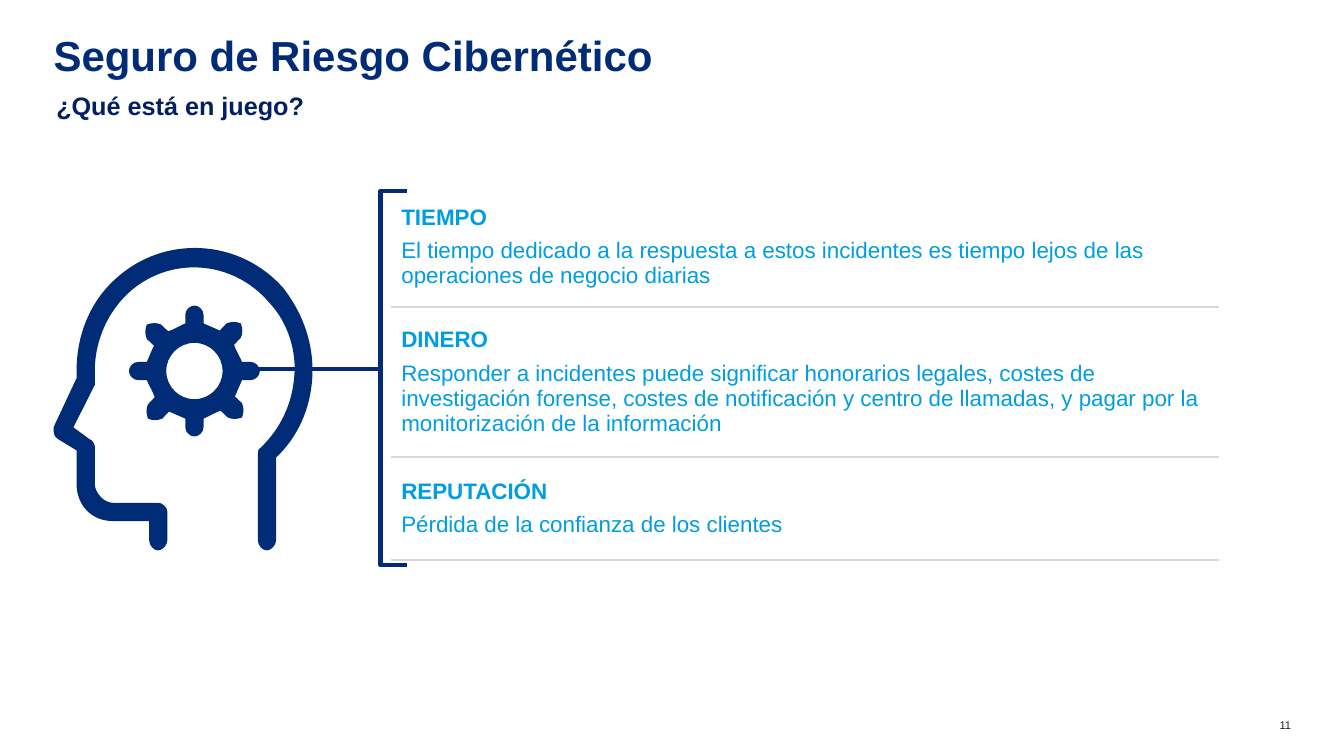
from dataclasses import dataclass

from lxml.etree import SubElement
from pptx import Presentation
from pptx.dml.color import RGBColor
from pptx.enum.shapes import MSO_CONNECTOR
from pptx.enum.text import MSO_ANCHOR, MSO_AUTO_SIZE, PP_ALIGN
from pptx.oxml.ns import qn
from pptx.util import Cm, Pt


@dataclass(frozen=True)
class Theme:
    """Colours, font and type sizes of the deck."""
    font: str = "Arial"
    navy: str = "002C77"
    dark: str = "002060"
    sky: str = "009DE0"
    rule: str = "D9D9D9"
    ink: str = "202020"
    title: int = 30
    sub: int = 18
    body: int = 16
    small: int = 8
    stroke: int = 3
    border: float = 1.5


def rgb(code):
    """Turn a hex code into a colour."""
    return RGBColor.from_string(code)


def pairs(step):
    """Split a step into its points."""
    return list(zip(step[::2], step[1::2]))


def spin(step, turns, x, y):
    """Turn a step by quarters and move it to a centre."""
    points = pairs(step)
    for _ in range(turns):
        points = [(-v, u) for u, v in points]
    return tuple(n for u, v in points for n in (x + u, y + v))


def ring(steps, x, y):
    """Repeat a quarter of steps around a centre."""
    return [spin(step, turns, x, y) for turns in range(4) for step in steps]


class Board:
    """Hold the theme and the current slide, and draw on it."""

    def __init__(self, slide, theme):
        """Keep the slide and its theme."""
        self.slide, self.theme = slide, theme

    def style(self, para, size, color, bold=False):
        """Format every run of a paragraph."""
        for run in para.runs:
            font = run.font
            font.name, font.size, font.bold = self.theme.font, Pt(size), bold
            font.color.rgb = rgb(color)

    def title(self, text, left, top, width, height):
        """Place and format the title placeholder."""
        shape = self.slide.shapes.title
        shape.left, shape.top = Cm(left), Cm(top)
        shape.width, shape.height = Cm(width), Cm(height)
        frame = shape.text_frame
        frame.text = text
        frame.auto_size = MSO_AUTO_SIZE.NONE
        frame.vertical_anchor = MSO_ANCHOR.TOP
        frame.margin_left = frame.margin_right = 0
        frame.margin_top = frame.margin_bottom = 0
        para = frame.paragraphs[0]
        para.alignment, para.line_spacing = PP_ALIGN.LEFT, 0.8
        self.style(para, self.theme.title, self.theme.navy, True)

    def label(self, text, left, top, width, height, size, color,
              bold=False, align=PP_ALIGN.LEFT, inset=None):
        """Add a one-paragraph text box."""
        box = self.slide.shapes.add_textbox(Cm(left), Cm(top), Cm(width), Cm(height))
        frame = box.text_frame
        frame.word_wrap = True
        if inset is not None:
            frame.margin_left = frame.margin_right = Cm(inset)
            frame.margin_top = frame.margin_bottom = Cm(inset)
        frame.text = text
        frame.paragraphs[0].alignment = align
        self.style(frame.paragraphs[0], size, color, bold)

    def link(self, left, right, y):
        """Add a level line that starts with a dot."""
        line = self.slide.shapes.add_connector(
            MSO_CONNECTOR.STRAIGHT, Cm(left), Cm(y), Cm(right), Cm(y))
        line.line.color.rgb = rgb(self.theme.navy)
        line.line.width = Pt(self.theme.stroke)
        SubElement(line.line._get_or_add_ln(), qn("a:headEnd"), type="oval")
        SubElement(line._element.spPr, qn("a:effectLst"))

    def bend(self, shape, steps):
        """Join the points of each six-number step into one curve."""
        nodes = iter(list(shape._element.iter(qn("a:lnTo"))))
        for step in steps:
            first, *others = [next(nodes) for _ in pairs(step)]
            for node in others:
                first.append(node[0])
                node.getparent().remove(node)
            if others:
                first.tag = qn("a:cubicBezTo")

    def outline(self, *paths, solid=True):
        """Add a filled outline or an open stroke."""
        paths = [[tuple(n * 100 for n in step) for step in path] for path in paths]
        maker = self.slide.shapes.build_freeform(*paths[0][0], scale=Cm(0.01))
        for i, (start, *steps) in enumerate(paths):
            if i:
                maker.move_to(*start)
            maker.add_line_segments([p for s in steps for p in pairs(s)], close=solid)
        shape = maker.convert_to_shape()
        self.bend(shape, [step for path in paths for step in path[1:]])
        shape.shadow.inherit = False
        if solid:
            shape.fill.solid()
            shape.fill.fore_color.rgb = rgb(self.theme.navy)
            shape.line.fill.background()
        else:
            shape.fill.background()
            shape.line.color.rgb = rgb(self.theme.navy)
            shape.line.width = Pt(self.theme.stroke)

    def edge(self, cell, side, shown):
        """Draw or clear one border of a cell."""
        line = SubElement(cell._tc.get_or_add_tcPr(), qn(f"a:{side}"),
                          w=str(Pt(self.theme.border)))
        if shown:
            fill = SubElement(line, qn("a:solidFill"))
            SubElement(fill, qn("a:srgbClr"), val=self.theme.rule)
        else:
            SubElement(line, qn("a:noFill"))

    def table(self, items, left, top, width, heights):
        """Add a one-column table of headed texts."""
        grid = self.slide.shapes.add_table(
            len(items), 1, Cm(left), Cm(top), Cm(width), Cm(sum(heights))).table
        grid.first_row = grid.horz_banding = False
        for i, (item, height) in enumerate(zip(items, heights)):
            grid.rows[i].height = Cm(height)
            cell = grid.cell(i, 0)
            for side, shown in (("lnL", False), ("lnR", False), ("lnT", i > 0), ("lnB", True)):
                self.edge(cell, side, shown)
            cell.fill.background()
            cell.vertical_anchor = MSO_ANCHOR.MIDDLE
            cell.text_frame.text = "\n".join(item)
            for j, para in enumerate(cell.text_frame.paragraphs):
                para.space_after = Pt(6)
                self.style(para, self.theme.body, self.theme.sky, j == 0)


HEAD = [
    (7.14, 7.26), (6.05, 6.02, 4.14, 5.89, 2.9, 7.04),
    (2.26, 7.62, 1.93, 8.46, 1.93, 9.35),
    (1.93, 9.53), (1.35, 10.77), (1.35, 10.9, 1.35, 11, 1.47, 11.07),
    (1.93, 11.35), (1.93, 12.19), (1.93, 12.73, 2.31, 13.13, 2.84, 13.13),
    (3.76, 13.13), (3.76, 13.61), (3.76, 13.74, 3.86, 13.87, 3.99, 13.87),
    (4.09, 13.87, 4.22, 13.74, 4.22, 13.61), (4.22, 12.9),
    (4.22, 12.78, 4.09, 12.67, 3.99, 12.67), (2.84, 12.67),
    (2.62, 12.67, 2.39, 12.42, 2.39, 12.19), (2.39, 11.25),
    (2.39, 11.18, 2.31, 11.07, 2.26, 11.07), (1.85, 10.77), (2.39, 9.7), (2.39, 9.35),
    (2.39, 8.64, 2.67, 7.92, 3.23, 7.39), (4.27, 6.43, 5.87, 6.55, 6.78, 7.62),
    (7.24, 8.1, 7.47, 8.81, 7.42, 9.45), (7.37, 10.19, 7.06, 10.82, 6.55, 11.3),
    (6.5, 11.3, 6.5, 11.43, 6.5, 11.48), (6.5, 13.61),
    (6.5, 13.74, 6.6, 13.87, 6.73, 13.87), (6.83, 13.87, 6.96, 13.74, 6.96, 13.61),
    (6.96, 11.53), (7.52, 11, 7.82, 10.29, 7.87, 9.53),
    (7.92, 8.69, 7.65, 7.92, 7.14, 7.26),
]
TEETH = [
    (-0.23, -1.42), (-0.23, -1.55, -0.1, -1.65, 0, -1.65),
    (0.1, -1.65, 0.23, -1.55, 0.23, -1.42), (0.23, -1.2),
    (0.41, -1.12, 0.53, -1.07, 0.64, -1.02), (0.81, -1.2),
    (0.94, -1.25, 1.04, -1.25, 1.17, -1.2), (1.22, -1.07, 1.22, -0.94, 1.17, -0.84),
    (1, -0.66), (1.04, -0.53, 1.12, -0.41, 1.2, -0.23),
]
HOLE = [(0.39, -0.71, 0.71, -0.39, 0.71, 0)]
HUB = (4.9, 9.35)
STAKES = [
    ("TIEMPO", "El tiempo dedicado a la respuesta a estos incidentes es tiempo "
     "lejos de las operaciones de negocio diarias"),
    ("DINERO", "Responder a incidentes puede significar honorarios legales, costes de "
     "investigación forense, costes de notificación y centro de llamadas, y pagar por "
     "la monitorización de la información"),
    ("REPUTACIÓN", "Pérdida de la confianza de los clientes"),
]


def main():
    """Build the slide and save it."""
    deck, theme = Presentation(), Theme()
    deck.slide_width, deck.slide_height = Cm(33.87), Cm(19.05)
    board = Board(deck.slides.add_slide(deck.slide_layouts[5]), theme)
    board.title("Seguro de Riesgo Cibernético", 1.35, 0.99, 31.17, 0.89)
    board.label("¿Qué está en juego?", 1.17, 2.15, 31.19, 0.89, theme.sub, theme.dark, True)
    board.link(5.79, 9.6, 9.3)
    board.outline([(10.25, 4.82), (9.59, 4.82), (9.59, 14.24), (10.25, 14.24)], solid=False)
    board.table(STAKES, 9.86, 4.7, 20.85, (3.03, 3.78, 2.61))
    board.outline(HEAD)
    board.outline([spin((-0.23, -1.2), 0, *HUB), *ring(TEETH, *HUB)],
                  [spin((0, -0.71), 0, *HUB), *ring(HOLE, *HUB)])
    board.label("11", 31.75, 18.11, 0.79, 0.33, theme.small, theme.ink,
                align=PP_ALIGN.RIGHT, inset=0)
    deck.save("out.pptx")


if __name__ == "__main__":
    main()
